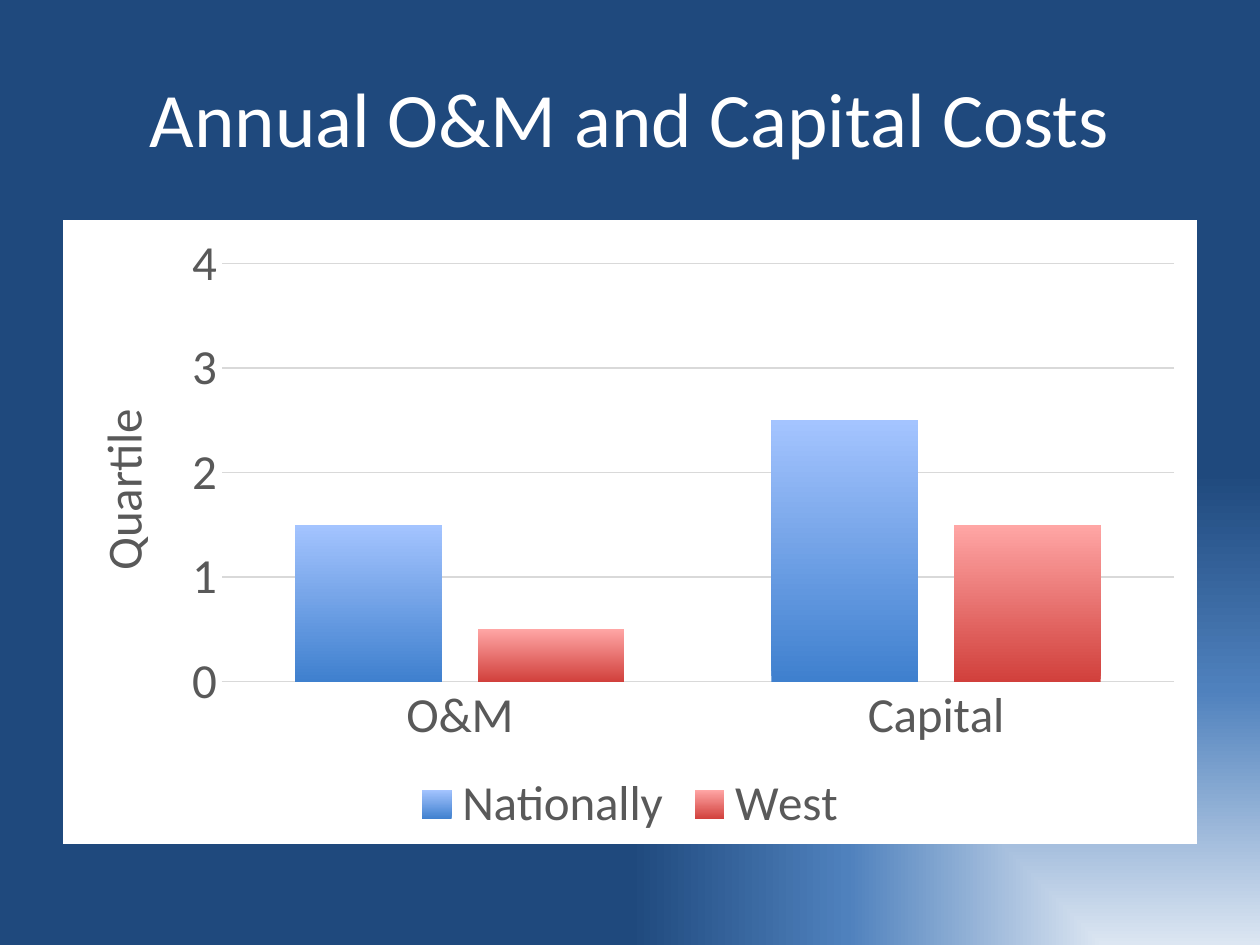
from dataclasses import dataclass

from lxml.etree import SubElement
from pptx import Presentation
from pptx.chart.data import CategoryChartData
from pptx.dml.color import RGBColor
from pptx.enum.chart import XL_CHART_TYPE, XL_LEGEND_POSITION, XL_TICK_MARK
from pptx.enum.text import MSO_ANCHOR, PP_ALIGN
from pptx.oxml.ns import qn
from pptx.util import Emu, Pt

SCALE = 914400 / 126


def px(n):
    return Emu(round(n * SCALE))


@dataclass(frozen=True)
class Theme:
    font: str = "Calibri"
    head: int = 44
    label: int = 28
    white: str = "FFFFFF"
    gray: str = "595959"
    rule: str = "D9D9D9"
    back: tuple = ((0, "DCE6F2"), (54, "4F81BD"), (100, "1F497D"))
    bars: tuple = (("3F80CE", "A4C4FF"), ("D1403C", "FFA6A5"))


class Deck:
    def __init__(self, theme):
        self.theme = theme
        self.file = Presentation()
        self.file.slide_width, self.file.slide_height = px(1260), px(945)
        self.slide = self.file.slides.add_slide(self.file.slide_layouts[5])

    def style(self, font, size, color):
        font.name, font.size, font.bold = self.theme.font, Pt(size), False
        font.color.rgb = RGBColor.from_string(color)

    def back(self):
        """Fill the background with a gradient spreading from the lower right corner."""
        self.slide.background.fill.gradient()
        grad = next(self.slide.element.iter(qn("a:gradFill")))
        for part in list(grad):
            grad.remove(part)
        stops = SubElement(grad, qn("a:gsLst"))
        for place, color in self.theme.back:
            stop = SubElement(stops, qn("a:gs"), pos=str(place * 1000))
            SubElement(stop, qn("a:srgbClr"), val=color)
        shade = SubElement(grad, qn("a:path"), {"path": "rect"})
        SubElement(shade, qn("a:fillToRect"), l="100000", t="100000")

    def title(self, text, left, top, width, height):
        box = self.slide.shapes.title
        box.left, box.top, box.width, box.height = map(px, (left, top, width, height))
        frame = box.text_frame
        frame.text = text
        frame.vertical_anchor = MSO_ANCHOR.MIDDLE
        par = frame.paragraphs[0]
        par.alignment = PP_ALIGN.CENTER
        self.style(par.font, self.theme.head, self.theme.white)

    def chart(self, cats, rows, label, left, top, width, height):
        data = CategoryChartData()
        data.categories = cats
        for name, vals in rows.items():
            data.add_series(name, vals)
        chart = self.slide.shapes.add_chart(
            XL_CHART_TYPE.COLUMN_CLUSTERED, *map(px, (left, top, width, height)), data
        ).chart
        self.style(chart.font, self.theme.label, self.theme.gray)
        chart.has_title = False
        chart.has_legend = True
        chart.legend.position = XL_LEGEND_POSITION.BOTTOM
        chart.legend.include_in_layout = False
        self.style(chart.legend.font, self.theme.label, self.theme.gray)
        self.bars(chart.plots[0])
        self.axes(chart, label)
        self.panel(chart)

    def bars(self, plot):
        plot.gap_width, plot.overlap = 100, -24
        plot.vary_by_categories = False
        for row, colors in zip(plot.series, self.theme.bars):
            row.invert_if_negative = False
            fill = row.format.fill
            fill.gradient()
            fill.gradient_angle = 90
            for stop, place, color in zip(fill.gradient_stops, (0, 1), colors):
                stop.position = place
                stop.color.rgb = RGBColor.from_string(color)

    def axes(self, chart, label):
        rule = RGBColor.from_string(self.theme.rule)
        cat, val = chart.category_axis, chart.value_axis
        for axis in (cat, val):
            axis.major_tick_mark = axis.minor_tick_mark = XL_TICK_MARK.NONE
            self.style(axis.tick_labels.font, self.theme.label, self.theme.gray)
        val.minimum_scale, val.maximum_scale, val.major_unit = 0, 4, 1
        val.format.line.fill.background()
        val.has_major_gridlines = True
        for line, size in ((cat.format.line, 1), (val.major_gridlines.format.line, 0.75)):
            line.color.rgb, line.width = rule, Pt(size)
        frame = val.axis_title.text_frame
        frame.text = label
        self.style(frame.paragraphs[0].font, self.theme.label, self.theme.gray)

    def panel(self, chart):
        """Paint the chart white and place its plot, leaving room for the axis title."""
        space = chart.element
        area = space.chart.plotArea
        for old in area.findall(qn("c:layout")):
            area.remove(old)
        layout = SubElement(area, qn("c:layout"))
        area.insert(0, layout)
        spot = SubElement(layout, qn("c:manualLayout"))
        for tag, val in (
            ("layoutTarget", "inner"), ("xMode", "edge"), ("yMode", "edge"),
            ("x", "0.14"), ("y", "0.07"), ("w", "0.84"), ("h", "0.67"),
        ):
            SubElement(spot, qn("c:" + tag), val=val)
        look = SubElement(space, qn("c:spPr"))
        space.chart.addnext(look)
        fill = SubElement(look, qn("a:solidFill"))
        SubElement(fill, qn("a:srgbClr"), val=self.theme.white)
        SubElement(SubElement(look, qn("a:ln")), qn("a:noFill"))


def main():
    deck = Deck(Theme())
    deck.back()
    deck.title("Annual O&M and Capital Costs", 63, 38, 1134, 158)
    rows = {"Nationally": (1.5, 2.5), "West": (0.5, 1.5)}
    deck.chart(("O&M", "Capital"), rows, "Quartile", 63, 220, 1134, 624)
    deck.file.save("out.pptx")


if __name__ == "__main__":
    main()
